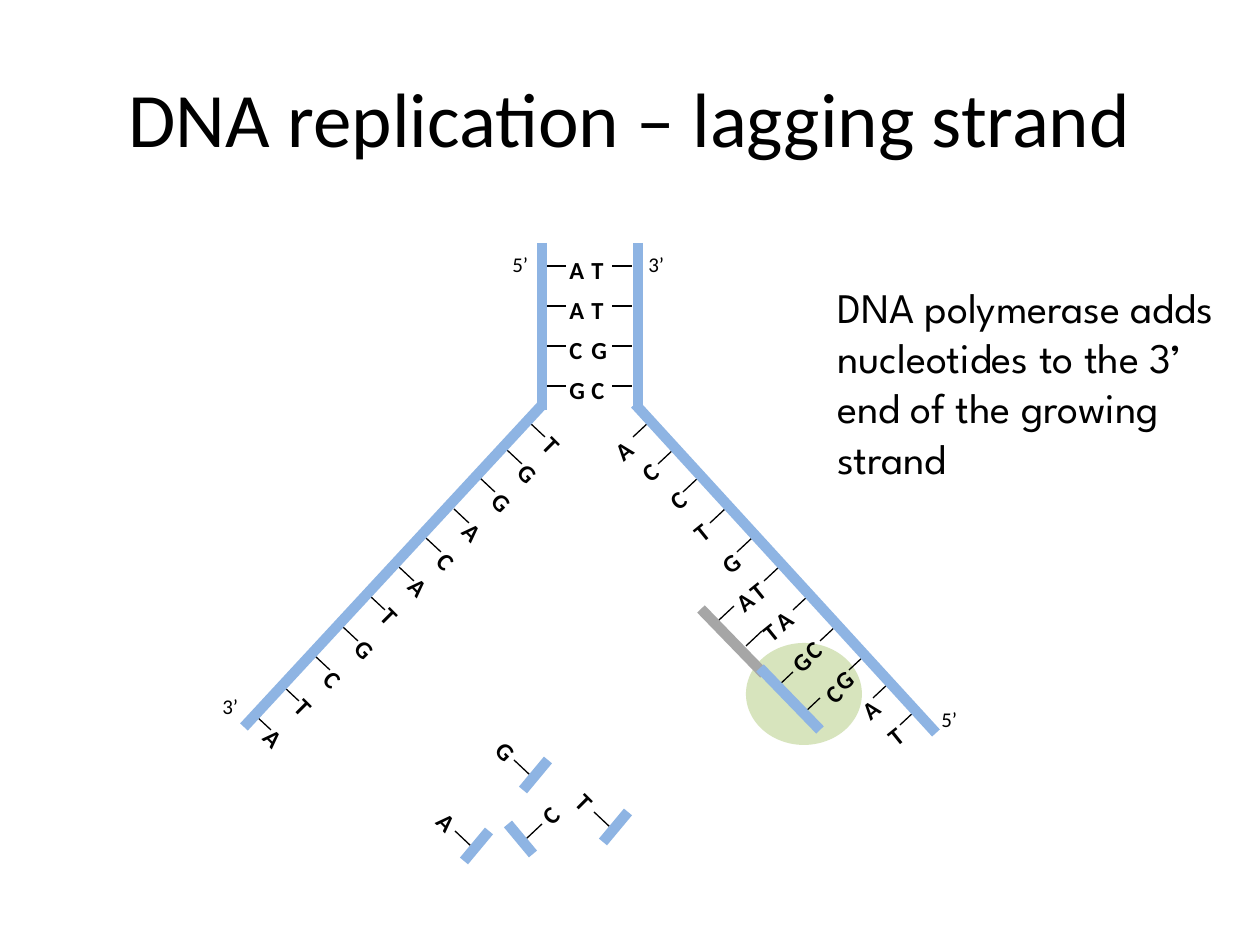
from lxml import etree
from pptx import Presentation
from pptx.dml.color import RGBColor
from pptx.enum.shapes import MSO_CONNECTOR as CONN, MSO_SHAPE as SHAPE
from pptx.enum.text import MSO_ANCHOR as ANCHOR, PP_ALIGN as ALIGN
from pptx.oxml.ns import qn
from pptx.util import Pt

PX = 914400 / 126
BLACK, BLUE, GRAY, GREEN = "000000", "8EB4E3", "A6A6A6", "D7E4BD"
LETTER = 39

TITLE = "DNA replication – lagging strand"
NOTE = "DNA polymerase adds nucleotides to the 3’ end of the growing strand"

STEM_PAIRS = [("A", "T"), ("A", "T"), ("C", "G"), ("G", "C")]
STEM_X = [(557, 546, 20), (579, 632, -20)]
STEM_TOP, STEM_STEP = 266, 40

LEFT_ARM = [
    ("T", 537, 422, 530, 423), ("G", 512, 449, 507, 450), ("G", 486, 478, 480, 478),
    ("A", 457, 508, 454, 509), ("C", 431, 538, 426, 538), ("A", 403, 563, 399, 567),
    ("T", 375, 593, 370, 596), ("G", 349, 625, 343, 627), ("C", 318, 656, 315, 656),
    ("T", 289, 684, 284, 687), ("A", 258, 714, 256, 716),
]
RIGHT_ARM = [
    ("A", 600, 426, 648, 423), ("C", 627, 447, 673, 450), ("C", 655, 475, 698, 478),
    ("T", 679, 507, 725, 509), ("G", 707, 539, 752, 538), ("T", 735, 566, 779, 567),
    ("A", 760, 596, 808, 596), ("C", 790, 625, 835, 627), ("G", 820, 656, 864, 656),
    ("A", 847, 685, 888, 684), ("T", 873, 711, 915, 711),
]
PRIMER = [("A", 721, 577, 718, 621), ("T", 748, 607, 746, 646)]
NEW_STRAND = [("G", 777, 639, 777, 687), ("C", 810, 670, 804, 713)]
STRANDS = [
    (LEFT_ARM, 45, 15, 14), (RIGHT_ARM, 321, -15, 14),
    (PRIMER, 321, 16, -15), (NEW_STRAND, 315, 16, -15),
]

FREE_NUCLEOTIDES = [
    ("C", 527, 791, True), ("G", 490, 727, False),
    ("A", 431, 798, False), ("T", 570, 779, False),
]
FREE_RUNG = (40, 48, 24, 33)
FREE_BAR = (58, 33, 33, 63)

BACKBONES = [
    (542, 243, 542, 410, BLUE), (543, 404, 244, 727, BLUE),
    (638, 243, 638, 410, BLUE), (635, 404, 936, 733, BLUE),
    (764, 674, 701, 609, GRAY), (760, 668, 820, 730, BLUE),
]
ENDS = [("5’", 500, 242), ("3’", 636, 242), ("3’", 210, 684), ("5’", 929, 697)]

prs = Presentation()
prs.slide_width, prs.slide_height = round(1260 * PX), round(945 * PX)
s = prs.slides.add_slide(prs.slide_layouts[6])


def emu(*lengths):
    return [round(v * PX) for v in lengths]


def add_text(text, x, y, w, h, size=14, font="Calibri", bold=False, rot=0,
             align=ALIGN.LEFT, anchor=ANCHOR.TOP, spacing=None, after=None):
    sp = s.shapes.add_textbox(*emu(x, y, w, h))
    sp.rotation = rot
    tf = sp.text_frame
    tf.word_wrap = True
    tf.vertical_anchor = anchor
    p = tf.paragraphs[0]
    p.alignment = align
    p.line_spacing = spacing
    p.space_after = after
    r = p.add_run()
    r.text = text
    r.font.size = Pt(size)
    r.font.name = font
    r.font.bold = bold
    r.font.color.rgb = RGBColor.from_string(BLACK)


def add_label(text, x, y, w=LETTER, **fmt):
    add_text(text, x, y, w, LETTER, spacing=1.15, after=Pt(10), **fmt)


def add_line(x1, y1, x2, y2, color=BLACK, width=0.75):
    sp = s.shapes.add_connector(CONN.STRAIGHT, *emu(x1, y1, x2, y2))
    sp.line.color.rgb = RGBColor.from_string(color)
    sp.line.width = Pt(width)
    etree.SubElement(sp._element.spPr, qn("a:effectLst"))


def mirror(x1, y1, x2, y2):
    return LETTER - x1, y1, LETTER - x2, y2


polymerase = s.shapes.add_shape(SHAPE.OVAL, *emu(746, 643, 116, 102))
polymerase.shadow.inherit = False
polymerase.fill.solid()
polymerase.fill.fore_color.rgb = RGBColor.from_string(GREEN)
polymerase.line.fill.background()

add_text(TITLE, 63, 38, 1134, 157, size=44, align=ALIGN.CENTER, anchor=ANCHOR.MIDDLE)

for i, pair in enumerate(STEM_PAIRS):
    y = STEM_TOP + i * STEM_STEP
    for base, (x, rung_x, dx) in zip(pair, STEM_X):
        add_label(base, x, y - 22, bold=True)
        add_line(rung_x, y, rung_x + dx, y)

for strand, rot, dx, dy in STRANDS:
    for base, x, y, rung_x, rung_y in strand:
        add_label(base, x, y, bold=True, rot=rot)
        add_line(rung_x, rung_y, rung_x + dx, rung_y + dy)

for base, x, y, flipped in FREE_NUCLEOTIDES:
    add_label(base, x, y, bold=True, rot=315 if flipped else 45)
    for part, color, width in [(FREE_RUNG, BLACK, 0.75), (FREE_BAR, BLUE, 6)]:
        x1, y1, x2, y2 = mirror(*part) if flipped else part
        add_line(x + x1, y + y1, x + x2, y + y2, color, width)

for *ends, color in BACKBONES:
    add_line(*ends, color, 6)

for text, x, y in ENDS:
    add_label(text, x, y, w=48, size=12)

add_text(NOTE, 825, 275, 415, 217, size=24, font="League Spartan")

prs.save("out.pptx")
